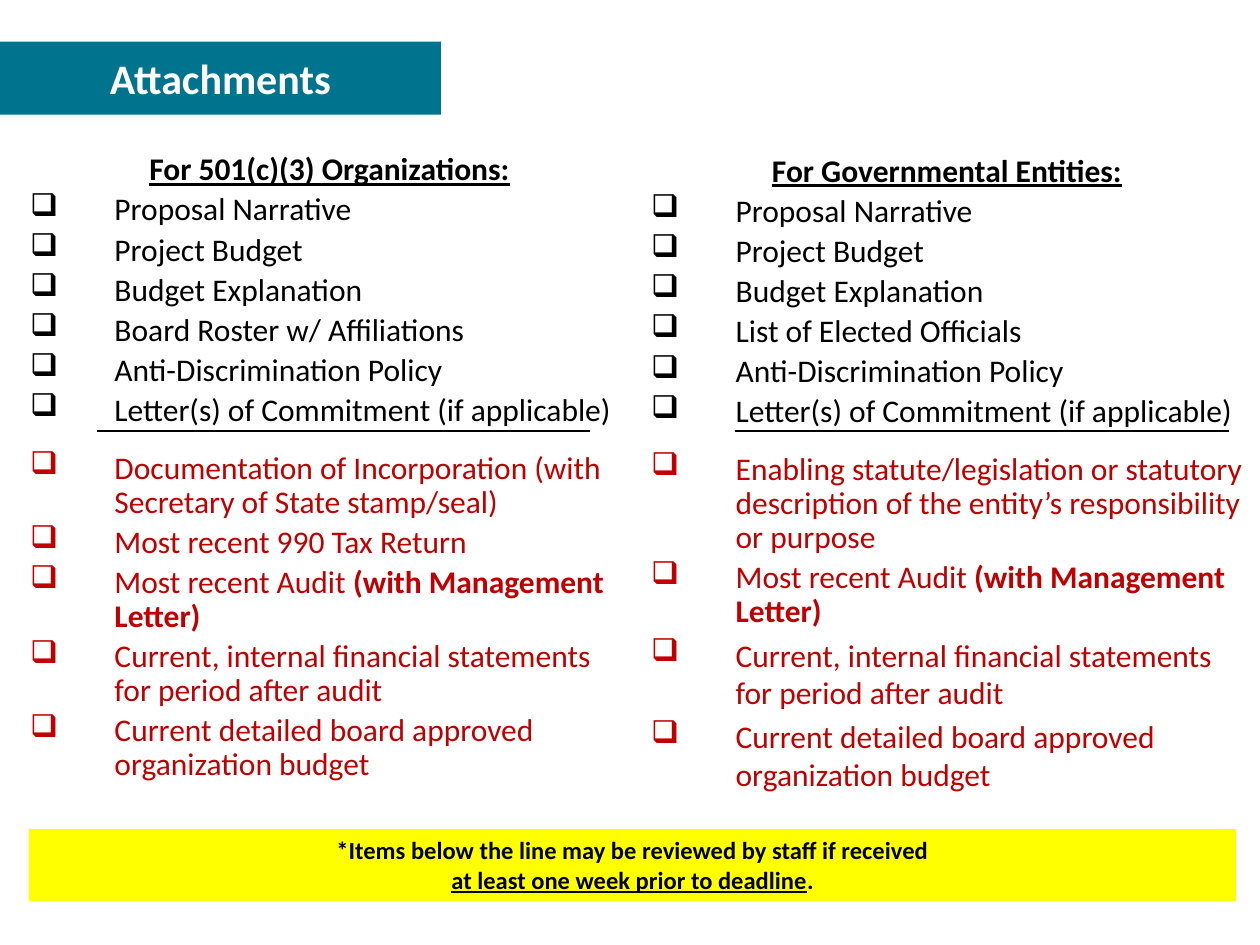
import pptx
import pptx.util
import pptx.dml.color
import pptx.enum.shapes
import pptx.enum.text
from lxml import etree

Inches = pptx.util.Inches
Pt = pptx.util.Pt
RGBColor = pptx.dml.color.RGBColor
CENTER = pptx.enum.text.PP_ALIGN.CENTER
ANCHOR = pptx.enum.text.MSO_ANCHOR

BLACK = RGBColor(0x00, 0x00, 0x00)
WHITE = RGBColor(0xFF, 0xFF, 0xFF)
RED = RGBColor(0xC0, 0x00, 0x00)
TEAL = RGBColor(0x00, 0x73, 0x8F)
YELLOW = RGBColor(0xFF, 0xFF, 0x00)

TITLE = "Attachments"
NOTE = "*Items below the line may be reviewed by staff if received"
DEADLINE = "at least one week prior to deadline"
AUDIT = ("Most recent Audit ", "(with Management Letter)")
STATEMENTS = ("Current, internal financial statements for period after audit",)
BUDGET = ("Current detailed board approved organization budget",)


def required_items(governing_body):
    return ["Proposal Narrative", "Project Budget", "Budget Explanation", governing_body,
            "Anti-Discrimination Policy", "Letter(s) of Commitment (if applicable)"]


CHECKLISTS = [
    {
        "heading": "For Governmental Entities:",
        "box": (5.07, 1.18, 4.89, 5.75),
        "divider": (5.83, 9.75),
        "required": required_items("List of Elected Officials"),
        "reviewed": [
            ("Enabling statute/legislation or statutory description of the entity’s "
             "responsibility or purpose",),
            AUDIT, STATEMENTS, BUDGET,
        ],
        "single_spaced": (STATEMENTS, BUDGET),
    },
    {
        "heading": "For 501(c)(3) Organizations:",
        "box": (0.14, 1.17, 4.95, 6.25),
        "divider": (0.77, 4.68),
        "required": required_items("Board Roster w/ Affiliations"),
        "reviewed": [
            ("Documentation of Incorporation (with Secretary of State stamp/seal)",),
            ("Most recent 990 Tax Return",),
            AUDIT, STATEMENTS, BUDGET,
        ],
        "single_spaced": (),
    },
]
DIVIDER_TOP = 3.42
ITEM_INDENT = 0.67
ITEM_GAP = 3.5
DIVIDER_GAP = 13.5


def write(paragraph, text, *, size=18, color=BLACK, bold=False, underline=False):
    run = paragraph.add_run()
    run.text = text
    font = run.font
    font.name = "Calibri"
    font.size = Pt(size)
    font.bold = bold
    font.underline = underline
    font.color.rgb = color


def add_item(frame, texts, color, gap, line_spacing=0.9):
    item = frame.add_paragraph()
    item.line_spacing = line_spacing
    item.space_before = Pt(gap)
    properties = item._p.get_or_add_pPr()
    properties.set("marL", str(Inches(ITEM_INDENT)))
    properties.set("indent", str(-Inches(ITEM_INDENT)))
    bullet = etree.SubElement(properties, pptx.oxml.ns.qn("a:buChar"))
    bullet.set("char", "❑")
    for position, text in enumerate(texts):
        write(item, text, color=color, bold=position > 0)


def add_checklist(slide, checklist):
    box = slide.shapes.add_textbox(*map(Inches, checklist["box"]))
    frame = box.text_frame
    frame.word_wrap = True
    heading = frame.paragraphs[0]
    heading.alignment = CENTER
    heading.line_spacing = 0.9
    write(heading, checklist["heading"], bold=True, underline=True)
    for text in checklist["required"]:
        add_item(frame, (text,), BLACK, ITEM_GAP)
    for position, texts in enumerate(checklist["reviewed"]):
        gap = ITEM_GAP if position else DIVIDER_GAP
        spacing = 1.0 if texts in checklist["single_spaced"] else 0.9
        add_item(frame, texts, RED, gap, spacing)


def add_divider(slide, left, right):
    divider = slide.shapes.add_connector(
        pptx.enum.shapes.MSO_CONNECTOR.STRAIGHT,
        Inches(left), Inches(DIVIDER_TOP), Inches(right), Inches(DIVIDER_TOP))
    divider.line.color.rgb = BLACK
    divider.line.width = Pt(0.75)
    etree.SubElement(divider._element.spPr, pptx.oxml.ns.qn("a:effectLst"))


def add_band(slide, box, fill, anchor):
    band = slide.shapes.add_shape(
        pptx.enum.shapes.MSO_SHAPE.RECTANGLE, *map(Inches, box))
    band.shadow.inherit = False
    band.fill.solid()
    band.fill.fore_color.rgb = fill
    band.line.fill.background()
    frame = band.text_frame
    frame.word_wrap = True
    frame.vertical_anchor = anchor
    frame.paragraphs[0].alignment = CENTER
    return frame


def main():
    deck = pptx.Presentation()
    deck.slide_width, deck.slide_height = Inches(10), Inches(7.5)
    slide = deck.slides.add_slide(deck.slide_layouts[6])

    for checklist in CHECKLISTS:
        add_checklist(slide, checklist)
        add_divider(slide, *checklist["divider"])

    note = add_band(slide, (0.23, 6.58, 9.58, 0.57), YELLOW, ANCHOR.TOP)
    write(note.paragraphs[0], NOTE, size=14, bold=True)
    deadline = note.add_paragraph()
    deadline.alignment = CENTER
    write(deadline, DEADLINE, size=14, bold=True, underline=True)
    write(deadline, ".", size=14, bold=True)

    title = add_band(slide, (0, 0.33, 3.5, 0.58), TEAL, ANCHOR.MIDDLE)
    write(title.paragraphs[0], TITLE, size=24, color=WHITE, bold=True)

    deck.save("out.pptx")


if __name__ == "__main__":
    main()
